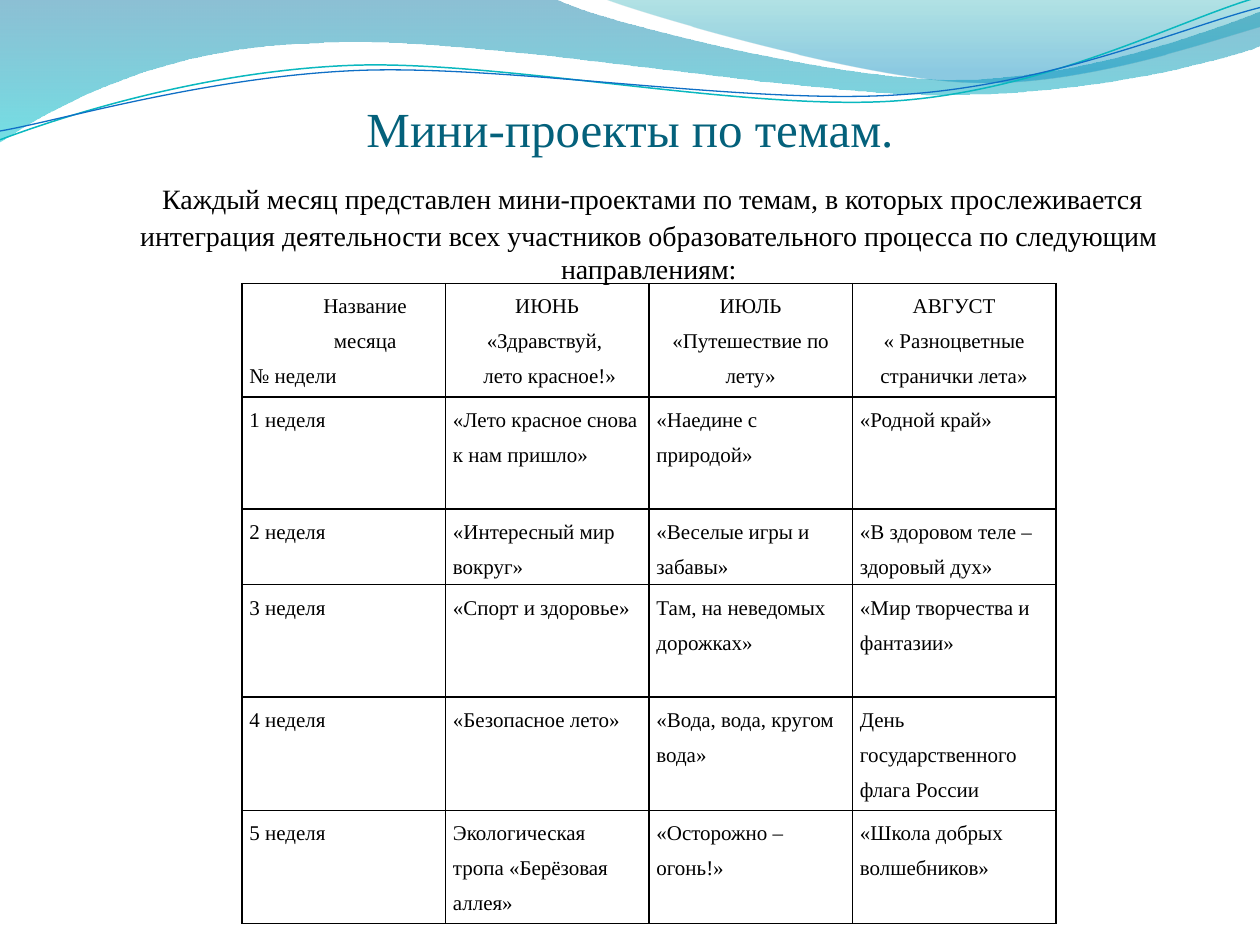
from lxml import etree
from pptx import Presentation
from pptx import util as u
from pptx.dml.color import RGBColor
from pptx.enum import text
from pptx.oxml import ns

COLORS = {
    "title": "04617B", "ink": "000000",
    "deep": "0074A1", "aqua": "00C6CF", "teal": "00A1A9", "sky": "008BBF",
    "teal_line": "0AB8BF", "blue_line": "0F6FC6",
}
FONT = "Times New Roman"
CENTER = text.PP_ALIGN.CENTER

# Waves: a start point, then segments of one point (line) or three (curve)
WIDE_WAVE = [(0, 0), [(4.4, -0.01)],
             [(4.76, 0.17), (6.64, 0.63), (7.58, 0.63)],
             [(8.53, 0.63), (9.58, 0.26), (10, 0.09)], [(10.01, 0.36)],
             [(9.83, 0.44), (8.7, 0.76), (7.46, 0.75)],
             [(6.22, 0.75), (3.82, 0.28), (2.57, 0.34)],
             [(1.29, 0.36), (0.46, 0.83), (-0.01, 1.13)]]
RIGHT_WAVE = [(4.79, -0.01), [(5.09, 0.11), (6.82, 0.62), (7.69, 0.65)],
              [(8.56, 0.69), (9.61, 0.32), (10, 0.21)], [(10, 0)]]
TEAL_CURVE = [(0, 1.11), [(0.48, 0.93), (1.58, 0.57), (2.77, 0.52)],
              [(3.95, 0.47), (5.93, 0.89), (7.13, 0.8)],
              [(8.33, 0.71), (9.38, 0.15), (9.98, -0.02)]]
BLUE_CURVE = [(0, 1.04), [(0.47, 0.96), (1.64, 0.61), (2.83, 0.56)],
              [(4.03, 0.51), (5.97, 0.84), (7.17, 0.75)],
              [(8.36, 0.67), (9.41, 0.21), (10, 0.06)]]

INTRO = ("Каждый месяц представлен мини-проектами по темам, в которых "
         "прослеживается интеграция деятельности всех участников "
         "образовательного процесса по следующим направлениям:")
PLAN = [
    ["Название\nмесяца\n№ недели", "ИЮНЬ\n«Здравствуй, \n лето красное!»",
     "ИЮЛЬ\n«Путешествие по лету»", "АВГУСТ\n« Разноцветные странички лета»"],
    ["1 неделя", "«Лето красное снова к нам пришло»", "«Наедине с природой»",
     "«Родной край»"],
    ["2 неделя", "«Интересный мир вокруг»", "«Веселые игры и забавы»",
     "«В здоровом теле – здоровый дух»"],
    ["3 неделя", "«Спорт и здоровье»", "Там, на неведомых дорожках»",
     "«Мир творчества и фантазии»"],
    ["4 неделя", "«Безопасное лето»", "«Вода, вода, кругом вода»",
     "День государственного флага России"],
    ["5 неделя", "Экологическая тропа «Берёзовая аллея»", "«Осторожно – огонь!»",
     "«Школа добрых волшебников»"],
]
ROW_HEIGHTS = [0.89, 0.89, 0.59, 0.89, 0.59, 0.59]


def rgb(name):
    return RGBColor.from_string(COLORS[name])


class Deck:
    def __init__(self):
        self.prs = Presentation()
        self.prs.slide_width, self.prs.slide_height = u.Inches(10), u.Inches(7.5)
        self.s = self.prs.slides.add_slide(self.prs.slide_layouts[6])

    def font(self, p, size, color="ink"):
        p.font.name, p.font.size = FONT, u.Pt(size)
        p.font.color.rgb = rgb(color)

    def outline(self, start, segments, close):
        builder = self.s.shapes.build_freeform(*map(u.Inches, start))
        points = [point for segment in segments for point in segment]
        builder.add_line_segments([tuple(map(u.Inches, p)) for p in points], close=close)
        sp = builder.convert_to_shape()
        sp.shadow.inherit = False
        # Join each three line steps of a curve into one cubic step
        steps = iter(list(sp.element.spPr.iter(ns.qn("a:lnTo"))))
        for segment in segments:
            group = [next(steps) for _ in segment]
            if len(group) == 3:
                cubic = etree.Element(ns.qn("a:cubicBezTo"))
                group[0].addprevious(cubic)
                for step in group:
                    cubic.append(step[0])
                    step.getparent().remove(step)
        return sp

    def wave(self, points, stops):
        sp = self.outline(points[0], points[1:], True)
        sp.line.fill.background()
        sp.fill.gradient()
        sp.fill.gradient_angle = 270
        for stop, (position, color, _) in zip(sp.fill.gradient_stops, stops):
            stop.position = position
            stop.color.rgb = rgb(color)
        for node, (_, _, opacity) in zip(sp.element.spPr.iter(ns.qn("a:srgbClr")), stops):
            etree.SubElement(node, ns.qn("a:alpha"), val=str(opacity * 1000))

    def curve(self, points, color, width):
        sp = self.outline(points[0], points[1:], False)
        sp.fill.background()
        sp.line.color.rgb, sp.line.width = rgb(color), u.Pt(width)

    def text(self, box, content, size, color="ink"):
        tf = self.s.shapes.add_textbox(*map(u.Inches, box)).text_frame
        tf.word_wrap = True
        p = tf.paragraphs[0]
        p.text, p.alignment = content, CENTER
        self.font(p, size, color)
        return tf

    def borders(self, cell):
        tc_pr = cell._tc.get_or_add_tcPr()
        for i, side in enumerate(("lnL", "lnR", "lnT", "lnB")):
            ln = etree.Element(ns.qn("a:" + side), w=str(u.Pt(1)))
            fill = etree.SubElement(ln, ns.qn("a:solidFill"))
            etree.SubElement(fill, ns.qn("a:srgbClr"), val=COLORS["ink"])
            tc_pr.insert(i, ln)

    def table(self, box, rows, heights):
        frame = self.s.shapes.add_table(len(rows), len(rows[0]), *map(u.Inches, box))
        table = frame.table
        table.first_row = table.horz_banding = False
        for row, height in zip(table.rows, heights):
            row.height = u.Inches(height)
        frame.height = u.Inches(box[3])
        for r, row in enumerate(rows):
            for c, content in enumerate(row):
                cell = table.cell(r, c)
                cell.text = content
                cell.fill.background()
                cell.margin_left = cell.margin_right = u.Inches(0.06)
                cell.margin_top = cell.margin_bottom = 0
                for p in cell.text_frame.paragraphs:
                    p.line_spacing = 1.5
                    self.font(p, 12)
                    if r == 0 and c > 0:
                        p.alignment = CENTER
                self.borders(cell)
        return table


def main():
    deck = Deck()

    # Waves along the top
    deck.wave(WIDE_WAVE, [(0, "deep", 45), (1, "aqua", 55)])
    deck.wave(RIGHT_WAVE, [(0, "teal", 30), (0.8, "sky", 45)])
    deck.curve(TEAL_CURVE, "teal_line", 0.85)
    deck.curve(BLUE_CURVE, "blue_line", 0.75)

    # Title
    title = deck.text((0.5, 0, 9, 1.25), "Мини-проекты по темам.", 28, "title")
    title.vertical_anchor = text.MSO_ANCHOR.BOTTOM
    title.margin_left = title.margin_right = title.margin_bottom = 0

    # Introduction, led by one large space
    intro = deck.text((0.5, 1.25, 9, 4.8), " ", 16).paragraphs[0]
    lead = intro.runs[0].font
    lead.name, lead.size = "TeX Gyre Pagella", u.Pt(26)
    intro.add_run().text = INTRO
    p_pr = intro._p.get_or_add_pPr()
    p_pr.set("marL", str(u.Inches(0.3)))
    p_pr.set("indent", str(u.Inches(-0.03)))

    # Plan by week and month; the corner cell names both axes
    table = deck.table((1.92, 2.25, 6.46, 5.08), PLAN, ROW_HEIGHTS)
    for p in table.cell(0, 0).text_frame.paragraphs[:2]:
        p.alignment = CENTER
        p._p.get_or_add_pPr().set("marL", str(u.Inches(0.34)))

    deck.prs.save("out.pptx")


if __name__ == "__main__":
    main()
